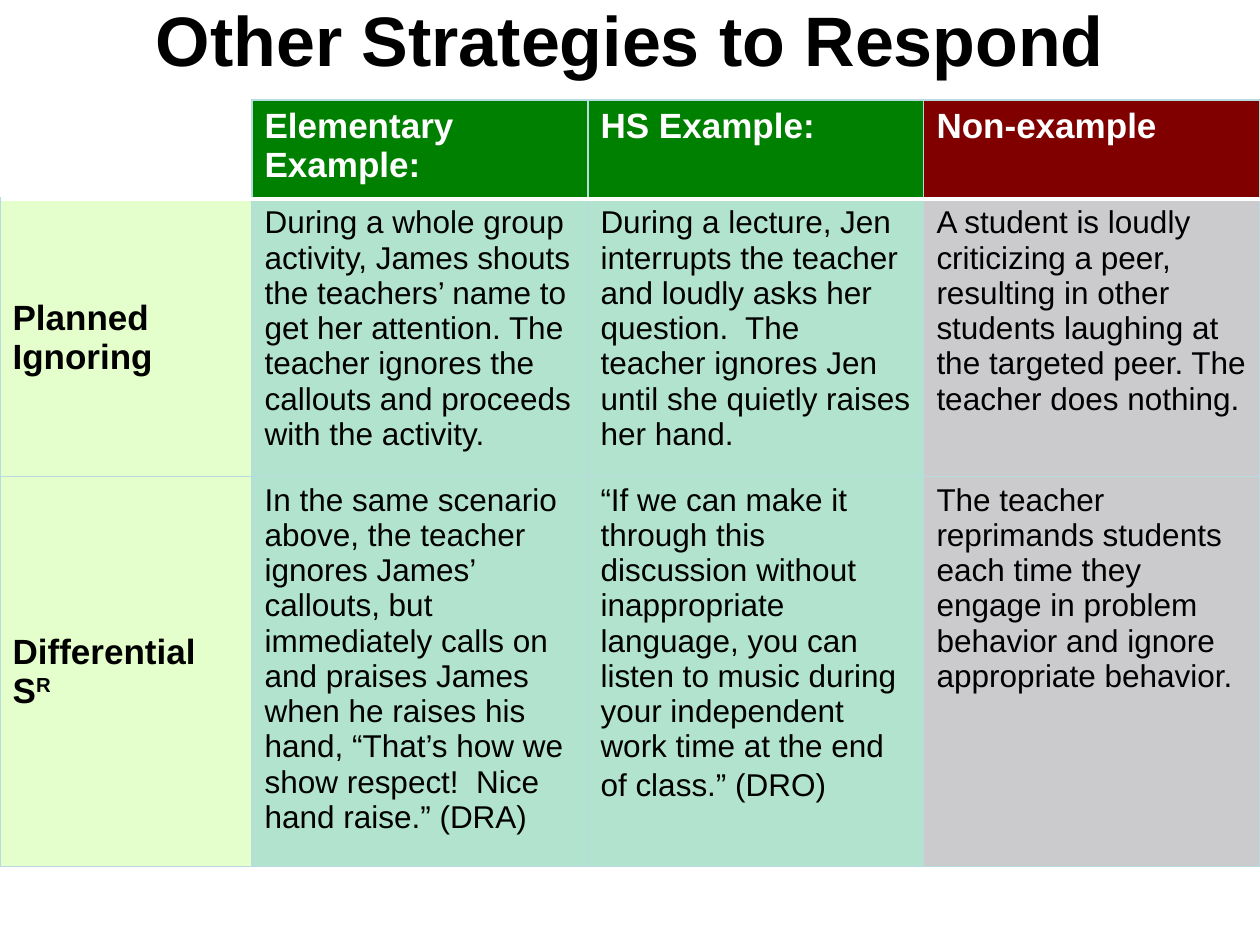
import pptx
import pptx.util
import pptx.dml.color
import pptx.enum.text
from lxml import etree

PX = 914400 // 126
A = "{http://schemas.openxmlformats.org/drawingml/2006/main}"
ANCHOR = pptx.enum.text.MSO_ANCHOR


def add_run(p, text, size, color, bold):
    r = p.add_run()
    r.text = text
    r.font.name = "Arial"
    r.font.size = pptx.util.Pt(size)
    r.font.bold = bold
    r.font.color.rgb = pptx.dml.color.RGBColor.from_string(color)
    return r


def add_border(cell, side, color, width):
    ln = etree.SubElement(cell._tc.get_or_add_tcPr(), A + "ln" + side,
                          w=str(pptx.util.Pt(width)))
    if color:
        fill = etree.SubElement(ln, A + "solidFill")
        etree.SubElement(fill, A + "srgbClr", val=color)
    else:
        etree.SubElement(ln, A + "noFill")


prs = pptx.Presentation()
prs.slide_width = pptx.util.Inches(10)
prs.slide_height = pptx.util.Inches(7.5)
s = prs.slides.add_slide(prs.slide_layouts[6])

# Title
tf = s.shapes.add_textbox(63 * PX, 0, 1134 * PX, 78 * PX).text_frame
tf.word_wrap = True
tf.vertical_anchor = ANCHOR.MIDDLE
p = tf.paragraphs[0]
p.alignment = pptx.enum.text.PP_ALIGN.CENTER
add_run(p, "Other Strategies to Respond", 40, "000000", True)

# Table content: header row, then one row per strategy
rows = [
    ["", "Elementary Example:", "HS Example:", "Non-example"],
    ["Planned Ignoring",
     "During a whole group activity, James shouts the teachers’ name to get her attention. "
     "The teacher ignores the callouts and proceeds with the activity.",
     "During a lecture, Jen interrupts the teacher and loudly asks her question.  "
     "The teacher ignores Jen until she quietly raises her hand.",
     "A student is loudly criticizing a peer, resulting in other students laughing at "
     "the targeted peer. The teacher does nothing."],
    ["Differential S",
     "In the same scenario above, the teacher ignores James’ callouts, but immediately calls on "
     "and praises James when he raises his hand, “That’s how we show respect!  "
     "Nice hand raise.” (DRA)",
     "“If we can make it through this discussion without inappropriate language, you can listen "
     "to music during your independent work time at the end of class.” (DRO)",
     "The teacher reprimands students each time they engage in problem behavior and ignore "
     "appropriate behavior."],
]
col_widths = [252, 336, 336, 336]
row_heights = [99, 260, 365]
header_fills = ["FFFFFF", "008000", "008000", "800000"]
body_fills = ["E5FFCC", "B2E3CF", "B2E3CF", "CBCACC"]

# Table
table = s.shapes.add_table(3, 4, 0, 100 * PX, sum(col_widths) * PX,
                           sum(row_heights) * PX).table
for column, width in zip(table.columns, col_widths):
    column.width = width * PX
for row, height in zip(table.rows, row_heights):
    row.height = height * PX

for i, texts in enumerate(rows):
    for j, text in enumerate(texts):
        cell = table.cell(i, j)
        corner = i == 0 and j == 0
        label = i == 0 or j == 0
        for side in "LRTB":
            if (i == 0 and side == "B") or (i == 1 and side == "T"):
                add_border(cell, side, "FFFFFF", 2)
            elif corner and side in "LT":
                add_border(cell, side, None, 0.75)
            else:
                add_border(cell, side, "B6DCDF", 0.75)
        cell.fill.solid()
        fills = body_fills if i else header_fills
        cell.fill.fore_color.rgb = pptx.dml.color.RGBColor.from_string(fills[j])
        cell.vertical_anchor = ANCHOR.MIDDLE if i and j == 0 else ANCHOR.TOP
        if text:
            add_run(cell.text_frame.paragraphs[0], text, 20 if label else 18,
                    "000000" if i else "FFFFFF", label)

# Superscript after the last row label, larger closing space in the HS cell
r = add_run(table.cell(2, 0).text_frame.paragraphs[0], "R", 20, "000000", True)
r.font._element.set("baseline", "30000")
add_run(table.cell(2, 2).text_frame.paragraphs[0], " ", 20, "000000", False)

prs.save("out.pptx")
